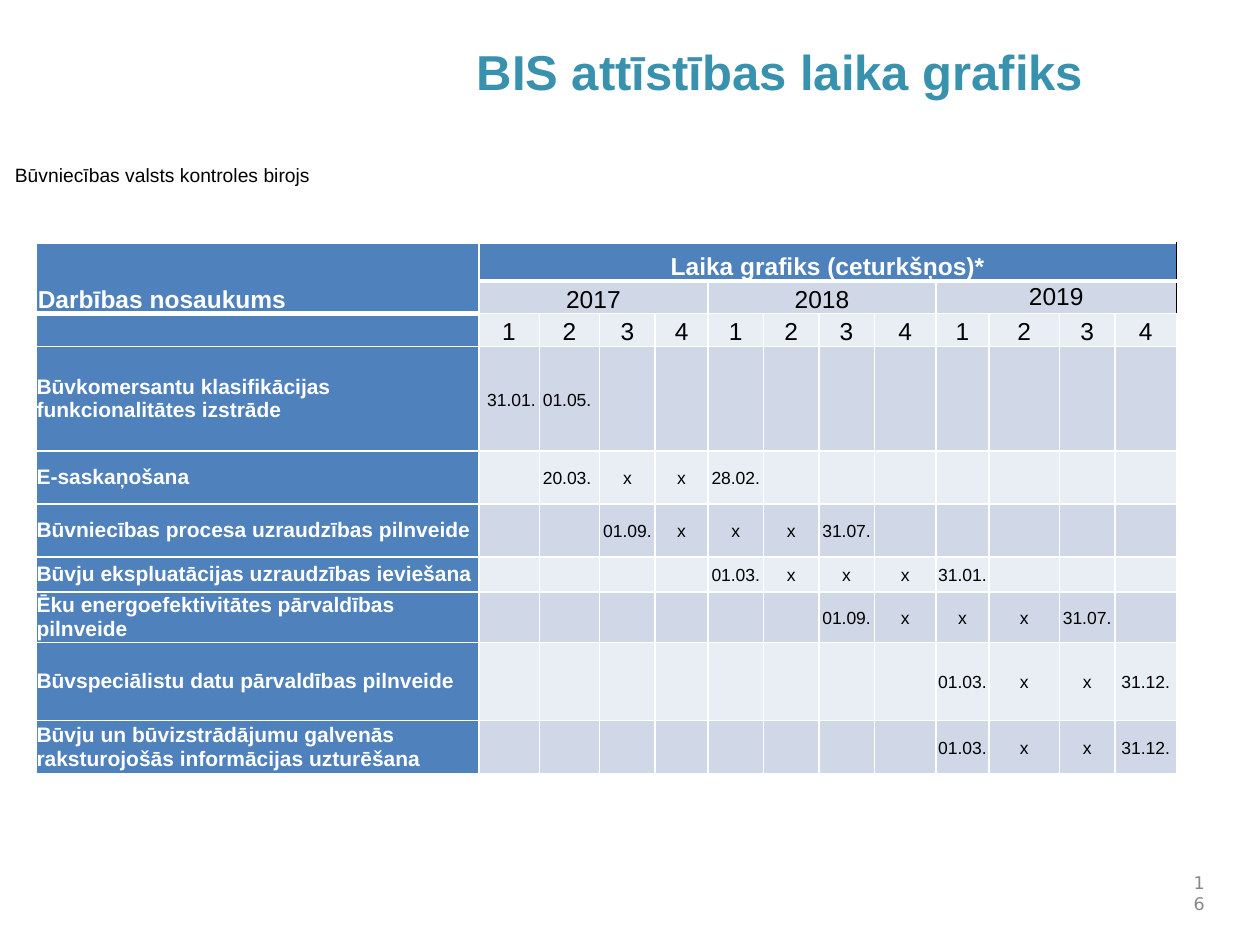
from lxml import etree
from pptx import Presentation
from pptx.dml.color import RGBColor
from pptx.enum import text
from pptx.oxml.ns import qn
from pptx.util import Inches, Pt

COLORS = {
    "blue": "4F81BD", "dark_band": "D0D8E8", "light_band": "E9EDF4",
    "white": "FFFFFF", "black": "000000", "teal": "3892AE", "gray": "898989",
}
TOP, MIDDLE, BOTTOM = (text.MSO_ANCHOR.TOP, text.MSO_ANCHOR.MIDDLE,
                       text.MSO_ANCHOR.BOTTOM)
LEFT, CENTER, RIGHT, JUSTIFY = (text.PP_ALIGN.LEFT, text.PP_ALIGN.CENTER,
                                text.PP_ALIGN.RIGHT, text.PP_ALIGN.JUSTIFY)

COLUMNS = [3.51, 0.48, 0.48, 0.44, 0.42, 0.44, 0.44, 0.44, 0.49,
           0.42, 0.56, 0.44, 0.49]
HEADER_ROWS = [0.3, 0.21, 0.24]
YEARS = ["2017", "2018", "2019"]
QUARTERS = 4

# Activity, row height, first quarter column, marks in consecutive quarters
ACTIVITIES = [
    ("Būvkomersantu klasifikācijas funkcionalitātes izstrāde", 0.83, 1,
     [" 31.01.", "01.05. "]),
    ("E-saskaņošana", 0.42, 2, ["20.03. ", "x", "x", "28.02."]),
    ("Būvniecības procesa uzraudzības pilnveide", 0.42, 3,
     ["01.09.", "x", "x", "x", "31.07."]),
    ("Būvju ekspluatācijas uzraudzības ieviešana", 0.28, 5,
     ["01.03.", "x", "x", "x", "31.01."]),
    ("Ēku energoefektivitātes pārvaldības pilnveide", 0.28, 7,
     ["01.09.", "x", "x", "x", "31.07."]),
    ("Būvspeciālistu datu pārvaldības pilnveide", 0.62, 9,
     ["01.03.", "x", "x", "31.12."]),
    ("Būvju un būvizstrādājumu galvenās raksturojošās informācijas uzturēšana",
     0.42, 9, ["01.03.", "x", "x", "31.12."]),
]


def rgb(name):
    return RGBColor.from_string(COLORS[name])


def write(frame, words, size, color, bold=False, align=LEFT, font="Arial"):
    paragraph = frame.paragraphs[0]
    paragraph.alignment = align
    run = paragraph.add_run()
    run.text = words
    run.font.size, run.font.name, run.font.bold = Pt(size), font, bold
    run.font.color.rgb = rgb(color)
    return paragraph


def add_label(slide, words, box, size, color, **style):
    label = slide.shapes.add_textbox(*map(Inches, box))
    label.text_frame.word_wrap = True
    write(label.text_frame, words, size, color, **style)
    return label


def paint(cell, fill, right="white", bottom=1):
    """Fill a cell and draw its four borders."""
    cell.fill.solid()
    cell.fill.fore_color.rgb = rgb(fill)
    sides = [("L", "white", 1), ("R", right, 1), ("T", "white", 1),
             ("B", "white", bottom)]
    props = cell._tc.get_or_add_tcPr()
    for place, (side, color, width) in enumerate(sides):
        line = etree.Element(qn(f"a:ln{side}"), w=str(Pt(width)))
        solid = etree.SubElement(line, qn("a:solidFill"))
        etree.SubElement(solid, qn("a:srgbClr"), val=COLORS[color])
        props.insert(place, line)


def fill_cell(cell, words, size, color="black", bold=False, align=CENTER,
              anchor=MIDDLE, margin=0.01, spaced=True):
    cell.margin_left = cell.margin_right = cell.margin_top = Inches(margin)
    cell.margin_bottom = 0
    cell.vertical_anchor = anchor
    if not words:
        # Keep empty cells from stretching their row
        etree.SubElement(cell.text_frame.paragraphs[0]._p,
                         qn("a:endParaRPr"), sz=str(size * 100))
        return
    paragraph = write(cell.text_frame, words, size, color, bold, align)
    if spaced:
        paragraph.line_spacing, paragraph.space_before = 1.07, Pt(4)


def merge(table, row, col, rows, cols, fill, **borders):
    for r in range(row, row + rows):
        for c in range(col, col + cols):
            paint(table.cell(r, c), fill, **borders)
    origin = table.cell(row, col)
    origin.merge(table.cell(row + rows - 1, col + cols - 1))
    return origin


def add_header(table):
    heading = dict(size=14, color="white", bold=True, anchor=BOTTOM)
    activity = merge(table, 0, 0, 2, 1, "blue", bottom=3)
    fill_cell(activity, "Darbības nosaukums", align=JUSTIFY, **heading)
    schedule = merge(table, 0, 1, 1, len(YEARS) * QUARTERS, "blue",
                     right="black", bottom=3)
    fill_cell(schedule, "Laika grafiks (ceturkšņos)*", **heading)

    # Years and their quarters
    paint(table.cell(2, 0), "blue")
    fill_cell(table.cell(2, 0), "", 10)
    for index, year in enumerate(YEARS):
        last = index == len(YEARS) - 1
        first_col = 1 + index * QUARTERS
        span = merge(table, 1, first_col, 1, QUARTERS, "dark_band",
                     right="black" if last else "white")
        fill_cell(span, year, 14, anchor=TOP if last else BOTTOM,
                  margin=0 if last else 0.01)
        for quarter in range(QUARTERS):
            cell = table.cell(2, first_col + quarter)
            paint(cell, "light_band")
            fill_cell(cell, str(quarter + 1), 14)


def add_activities(table):
    for index, (name, _, start, marks) in enumerate(ACTIVITIES):
        row = len(HEADER_ROWS) + index
        band = "light_band" if index % 2 else "dark_band"
        paint(table.cell(row, 0), "blue")
        fill_cell(table.cell(row, 0), name, 12, "white", True, LEFT,
                  margin=0, spaced=False)
        for col in range(1, len(COLUMNS)):
            mark = marks[col - start] if 0 <= col - start < len(marks) else ""
            paint(table.cell(row, col), band)
            fill_cell(table.cell(row, col), mark, 10)


def add_schedule(slide):
    heights = HEADER_ROWS + [activity[1] for activity in ACTIVITIES]
    table = slide.shapes.add_table(
        len(heights), len(COLUMNS), Inches(0.29), Inches(1.93),
        Inches(sum(COLUMNS)), Inches(sum(heights))).table
    table.first_row = table.horz_banding = False
    for column, width in zip(table.columns, COLUMNS):
        column.width = Inches(width)
    for row, height in zip(table.rows, heights):
        row.height = Inches(height)
    add_header(table)
    add_activities(table)


def add_title(slide, words):
    title = slide.shapes.title
    title.left, title.top, title.width, title.height = map(
        Inches, (2.78, 0.28, 6.82, 0.78))
    title.text_frame.vertical_anchor = TOP
    write(title.text_frame, words, 28, "teal", True, CENTER)


def main():
    deck = Presentation()
    deck.slide_width, deck.slide_height = Inches(10), Inches(7.5)
    slide = deck.slides.add_slide(deck.slide_layouts[5])

    # Office name
    office = add_label(slide, "Būvniecības valsts kontroles birojs",
                       (0.02, 1.25, 2.84, 0.28), 11, "black")
    office.fill.solid()
    office.fill.fore_color.rgb = rgb("white")

    add_schedule(slide)
    add_title(slide, "BIS attīstības laika grafiks")

    # Page number
    page = add_label(slide, "16", (9.33, 6.92, 0.33, 0.33), 10, "gray",
                     align=RIGHT, font="DejaVu Sans")
    page.text_frame.vertical_anchor = MIDDLE
    deck.save("out.pptx")


if __name__ == "__main__":
    main()
